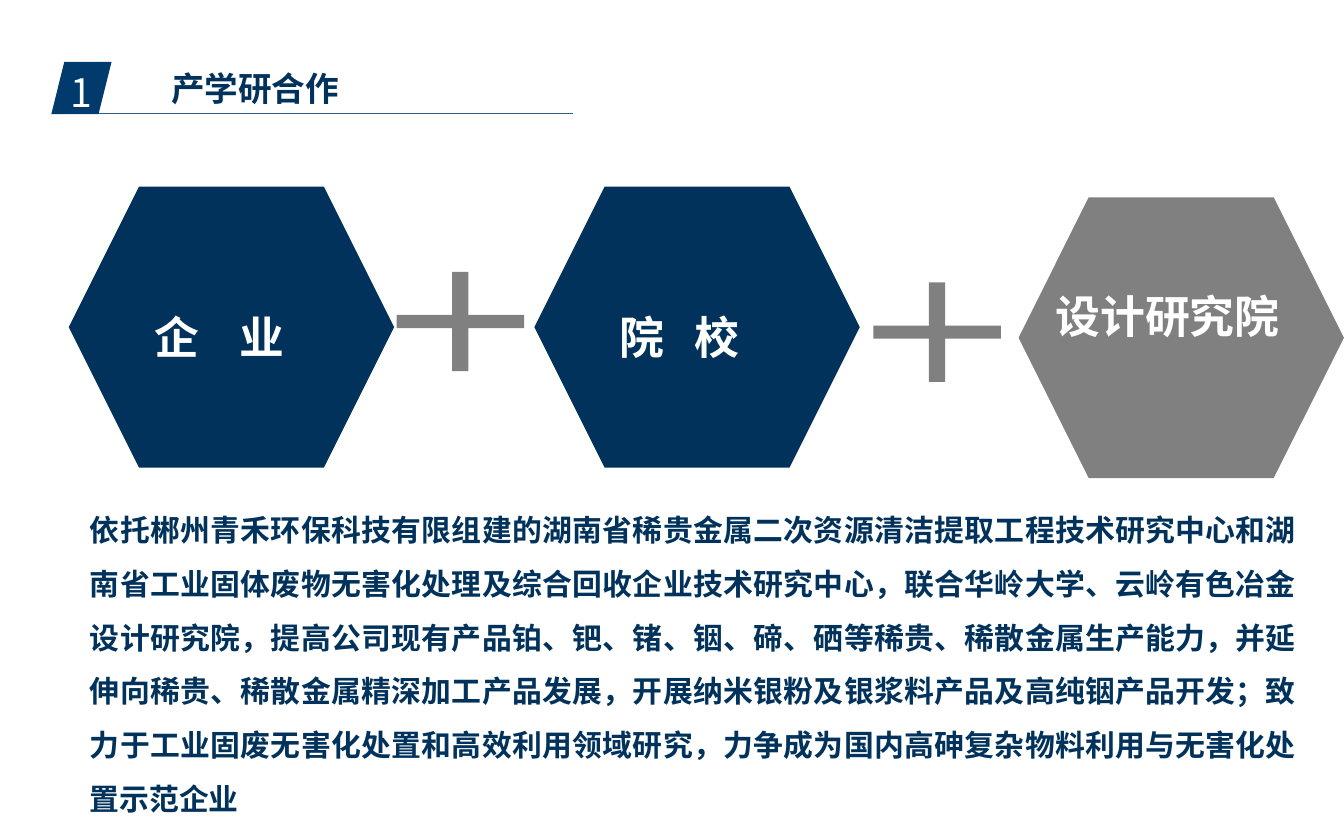
import pptx
import pptx.util
import pptx.dml.color
import pptx.enum.shapes
import pptx.enum.text
import pptx.oxml
import pptx.oxml.ns

Cm = pptx.util.Cm
Kind = pptx.enum.shapes.MSO_SHAPE
Align = pptx.enum.text.PP_ALIGN
NAVY, GRAY, WHITE = "01325B", "808080", "FFFFFF"


def color(code):
    return pptx.dml.color.RGBColor.from_string(code)


class Deck:
    """Holds the style and the current slide."""
    font = "Noto Sans CJK SC"

    def __init__(self, slide):
        self.slide = slide

    def shape(self, kind, x, y, w, h, fill):
        item = self.slide.shapes.add_shape(kind, Cm(x), Cm(y), Cm(w), Cm(h))
        item.shadow.inherit = False
        item.fill.solid()
        item.fill.fore_color.rgb = color(fill)
        item.line.fill.background()

    def plus(self, x, y):
        """Two crossed bars around a centre."""
        for w, h in ((2.41, 0.25), (0.31, 1.88)):
            self.shape(Kind.RECTANGLE, x - w / 2, y - h / 2, w, h, GRAY)

    def rule(self, x1, x2, y):
        line = self.slide.shapes.add_connector(
            pptx.enum.shapes.MSO_CONNECTOR.STRAIGHT, Cm(x1), Cm(y), Cm(x2), Cm(y))
        line.line.color.rgb = color("346182")
        line.line.width = pptx.util.Pt(0.75)
        line._element.spPr.append(pptx.oxml.parse_xml(
            "<a:effectLst %s/>" % pptx.oxml.ns.nsdecls("a")))

    def run(self, para, text, size, fill, bold=True, gap=0):
        run = para.add_run()
        run.text = text
        run.font.size = pptx.util.Pt(size)
        run.font.bold = bold
        run.font.name = self.font
        run.font.color.rgb = color(fill)
        props = run.font._element
        props.append(pptx.oxml.parse_xml('<a:ea %s typeface="%s"/>' % (
            pptx.oxml.ns.nsdecls("a"), self.font)))
        if gap:
            props.set("spc", str(round(gap * 100)))

    def frame(self, box, align):
        frame = box.text_frame
        frame.word_wrap = True
        frame.auto_size = pptx.enum.text.MSO_AUTO_SIZE.NONE
        frame.vertical_anchor = pptx.enum.text.MSO_ANCHOR.TOP
        frame.paragraphs[0].alignment = align
        return frame

    def text(self, x, y, w, h, align=Align.LEFT):
        box = self.slide.shapes.add_textbox(Cm(x), Cm(y), Cm(w), Cm(h))
        return self.frame(box, align)

    def title(self, text, x, y, w, h):
        box = self.slide.shapes.title
        box.left, box.top, box.width, box.height = Cm(x), Cm(y), Cm(w), Cm(h)
        frame = self.frame(box, Align.LEFT)
        self.run(frame.paragraphs[0], text, 18, NAVY)

    def label(self, parts, x, y, w, h, inset=0.25, gap=0):
        """White label; its parts are set apart by one widened space."""
        frame = self.text(x, y, w, h)
        frame.margin_left = Cm(inset)
        para = frame.paragraphs[0]
        for i, part in enumerate(parts):
            if i:
                self.run(para, " ", 24, WHITE, gap=gap)
            self.run(para, part, 24, WHITE)


def main():
    prs = pptx.Presentation()
    prs.slide_width, prs.slide_height = Cm(25.4), Cm(15.88)
    deck = Deck(prs.slides.add_slide(prs.slide_layouts[5]))

    # Heading, with room for one line
    deck.title("产学研合作", 2.98, 1.15, 4.2, 1.02)
    deck.rule(1.8, 10.82, 2.14)
    deck.shape(Kind.PARALLELOGRAM, 0.97, 1.17, 1.14, 0.99, "013B6D")
    number = deck.text(0.76, 1.17, 1.55, 1.14, Align.CENTER)
    deck.run(number.paragraphs[0], "1", 21, WHITE, bold=False)

    # Partners
    for x, y, fill in ((1.3, 3.53, NAVY), (10.1, 3.53, NAVY), (19.25, 3.73, GRAY)):
        deck.shape(Kind.HEXAGON, x, y, 6.15, 5.31, fill)
    deck.label(["企", "业"], 1.91, 5.74, 5, 1.27, inset=1.01, gap=16.1)
    deck.label(["院", "校"], 10.69, 5.74, 5, 1.27, inset=1.01, gap=10.8)
    deck.label(["设计研究院"], 19.7, 5.33, 5, 2.31)

    # Plus signs
    deck.plus(8.7, 6.08)
    deck.plus(17.71, 6.28)

    # Description
    body = deck.text(1.7, 9.34, 22.82, 6.15, Align.JUSTIFY)
    body.margin_left = body.margin_right = body.margin_top = body.margin_bottom = 0
    para = body.paragraphs[0]
    para.line_spacing = 1.5
    deck.run(para, (
        "依托郴州青禾环保科技有限组建的湖南省稀贵金属二次资源清洁提取工程技术研究中心"
        "和湖南省工业固体废物无害化处理及综合回收企业技术研究中心，"
        "联合华岭大学、云岭有色冶金设计研究院，"
        "提高公司现有产品铂、钯、锗、铟、碲、硒等稀贵、稀散金属生产能力，"
        "并延伸向稀贵、稀散金属精深加工产品发展，"
        "开展纳米银粉及银浆料产品及高纯铟产品开发；"
        "致力于工业固废无害化处置和高效利用领域研究，"
        "力争成为国内高砷复杂物料利用与无害化处置示范企业"), 16, NAVY)

    prs.save("out.pptx")


if __name__ == "__main__":
    main()
